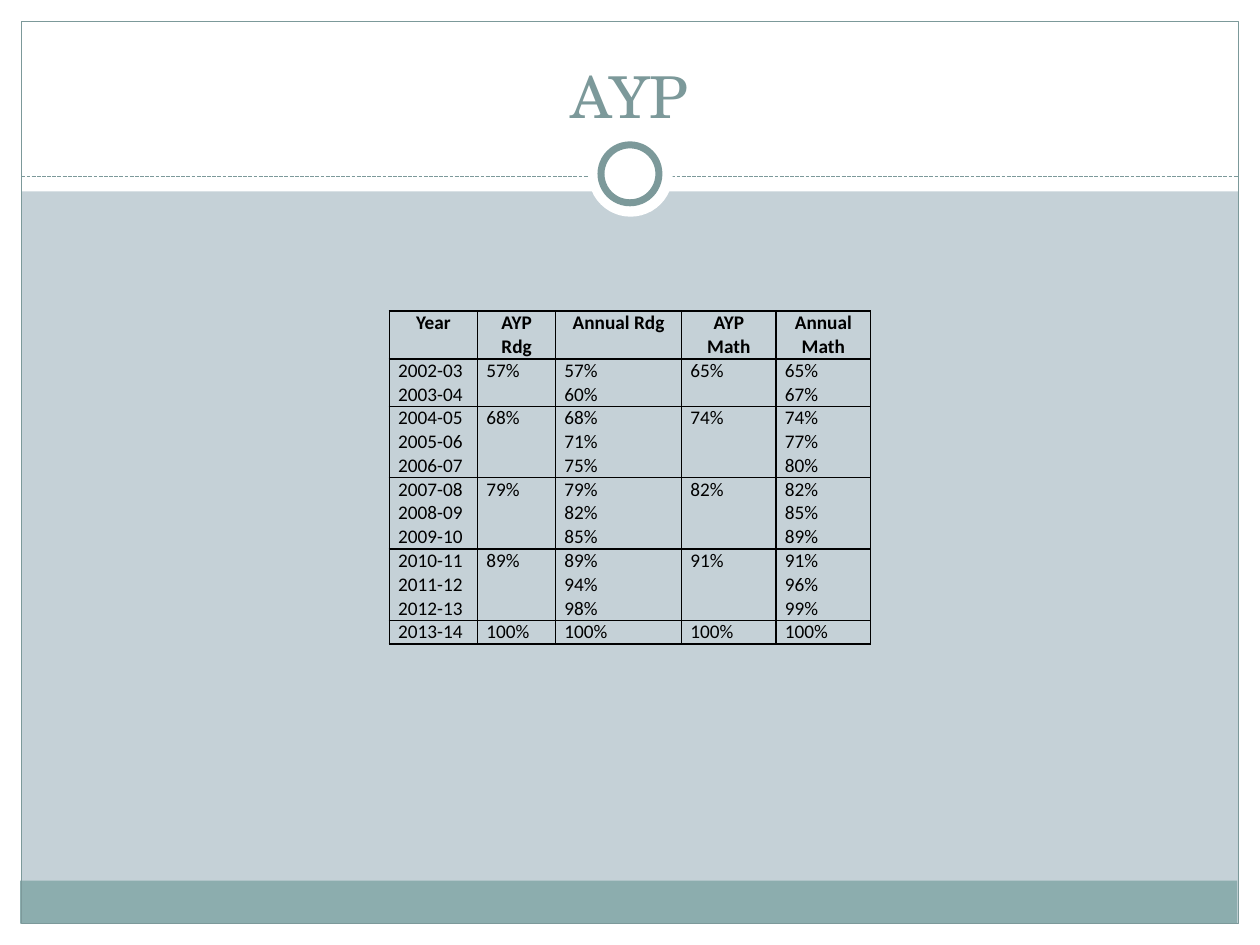
"""Build the AYP target slide with its framed background and yearly table."""
import pptx
import pptx.dml.color
import pptx.enum.dml
import pptx.enum.shapes
import pptx.enum.text
import pptx.util
from lxml import etree
from pptx.oxml.ns import qn
from pptx.util import Inches, Pt

RGBColor = pptx.dml.color.RGBColor
WHITE = RGBColor(0xFF, 0xFF, 0xFF)
BLACK = RGBColor(0, 0, 0)
PALE_BLUE = RGBColor(0xC5, 0xD1, 0xD7)
TEAL = RGBColor(0x8C, 0xAD, 0xAE)
SLATE = RGBColor(0x7C, 0x99, 0x9A)
SHAPE = pptx.enum.shapes.MSO_SHAPE
CENTER = pptx.enum.text.PP_ALIGN.CENTER

deck = pptx.Presentation()
deck.slide_width = Inches(10)
deck.slide_height = Inches(7.5)
page = deck.slides.add_slide(deck.slide_layouts[5])
page.background.fill.solid()
page.background.fill.fore_color.rgb = PALE_BLUE


def add_panel(kind, left, top, width, height, fill=None, line_width=None):
    panel = page.shapes.add_shape(
        kind, Inches(left), Inches(top), Inches(width), Inches(height))
    panel.shadow.inherit = False
    if fill is None:
        panel.fill.background()
    else:
        panel.fill.solid()
        panel.fill.fore_color.rgb = fill
    if line_width is None:
        panel.line.fill.background()
    else:
        panel.line.color.rgb = SLATE
        panel.line.width = Pt(line_width)


def add_border(cell, side, position):
    border = etree.Element(qn(f"a:{side}"), w=str(Pt(1)))
    fill = etree.SubElement(border, qn("a:solidFill"))
    etree.SubElement(fill, qn("a:srgbClr"), val=str(BLACK))
    cell._tc.get_or_add_tcPr().insert(position, border)


for left, top, width, height in [
        (0, 7.33, 10, 0.17), (0, 0, 10, 1.52),
        (0, 0, 0.17, 7.5), (9.83, 0, 0.17, 7.5)]:
    add_panel(SHAPE.RECTANGLE, left, top, width, height, WHITE)
add_panel(SHAPE.RECTANGLE, 0.16, 6.99, 9.66, 0.34, TEAL)
add_panel(SHAPE.RECTANGLE, 0.17, 0.17, 9.66, 7.16, line_width=0.75)

divider = page.shapes.add_connector(
    pptx.enum.shapes.MSO_CONNECTOR.STRAIGHT,
    Inches(0.17), Inches(1.4), Inches(9.83), Inches(1.4))
divider.line.color.rgb = SLATE
divider.line.width = Pt(0.75)
divider.line.dash_style = pptx.enum.dml.MSO_LINE.SQUARE_DOT
etree.SubElement(divider._element.spPr, qn("a:effectLst"))

add_panel(SHAPE.OVAL, 4.67, 1.05, 0.67, 0.67, WHITE)
add_panel(SHAPE.OVAL, 4.77, 1.15, 0.46, 0.46, WHITE, 4)

title = page.shapes.title
page.shapes._spTree.append(title._element)
title.left, title.top = Inches(0.33), Inches(0.25)
title.width, title.height = Inches(9.33), Inches(0.83)
title.text_frame.text = "AYP"
title.text_frame.auto_size = pptx.enum.text.MSO_AUTO_SIZE.NONE
title.text_frame.vertical_anchor = pptx.enum.text.MSO_ANCHOR.BOTTOM
title_para = title.text_frame.paragraphs[0]
title_para.alignment = CENTER
title_font = title_para.runs[0].font
title_font.name = "TeX Gyre Schola"
title_font.size = Pt(33)
title_font.color.rgb = SLATE

rows = [
    ["Year", "AYP Rdg", "Annual Rdg", "AYP Math", "Annual Math"],
    ["2002-03\n2003-04", "57%", "57%\n60%", "65%", "65%\n67%"],
    ["2004-05\n2005-06\n2006-07", "68%", "68%\n71%\n75%", "74%", "74%\n77%\n80%"],
    ["2007-08\n2008-09\n2009-10", "79%", "79%\n82%\n85%", "82%", "82%\n85%\n89%"],
    ["2010-11\n2011-12\n2012-13", "89%", "89%\n94%\n98%", "91%", "91%\n96%\n99%"],
    ["2013-14", "100%", "100%", "100%", "100%"],
]
line_counts = [2, 2, 3, 3, 3, 1]
column_widths = [0.7, 0.62, 1, 0.75, 0.75]
line_height = 0.18

table = page.shapes.add_table(
    len(rows), len(column_widths), Inches(3.09), Inches(2.47),
    Inches(sum(column_widths)), Inches(line_height * sum(line_counts))).table
table.first_row = False
table.horz_banding = False
for column, width in zip(table.columns, column_widths):
    column.width = Inches(width)

for row_index, (texts, line_count) in enumerate(zip(rows, line_counts)):
    table.rows[row_index].height = Inches(line_height * line_count)
    for column_index, text in enumerate(texts):
        cell = table.cell(row_index, column_index)
        cell.margin_left = cell.margin_right = Inches(0.07)
        cell.margin_top = cell.margin_bottom = 0
        cell.fill.background()
        for position, side in enumerate(["lnL", "lnR", "lnT", "lnB"]):
            add_border(cell, side, position)
        cell.text_frame.text = text
        for para in cell.text_frame.paragraphs:
            if row_index == 0:
                para.alignment = CENTER
            font = para.runs[0].font
            font.name = "Calibri"
            font.size = Pt(11)
            font.bold = row_index == 0
            font.color.rgb = BLACK

deck.save("out.pptx")
